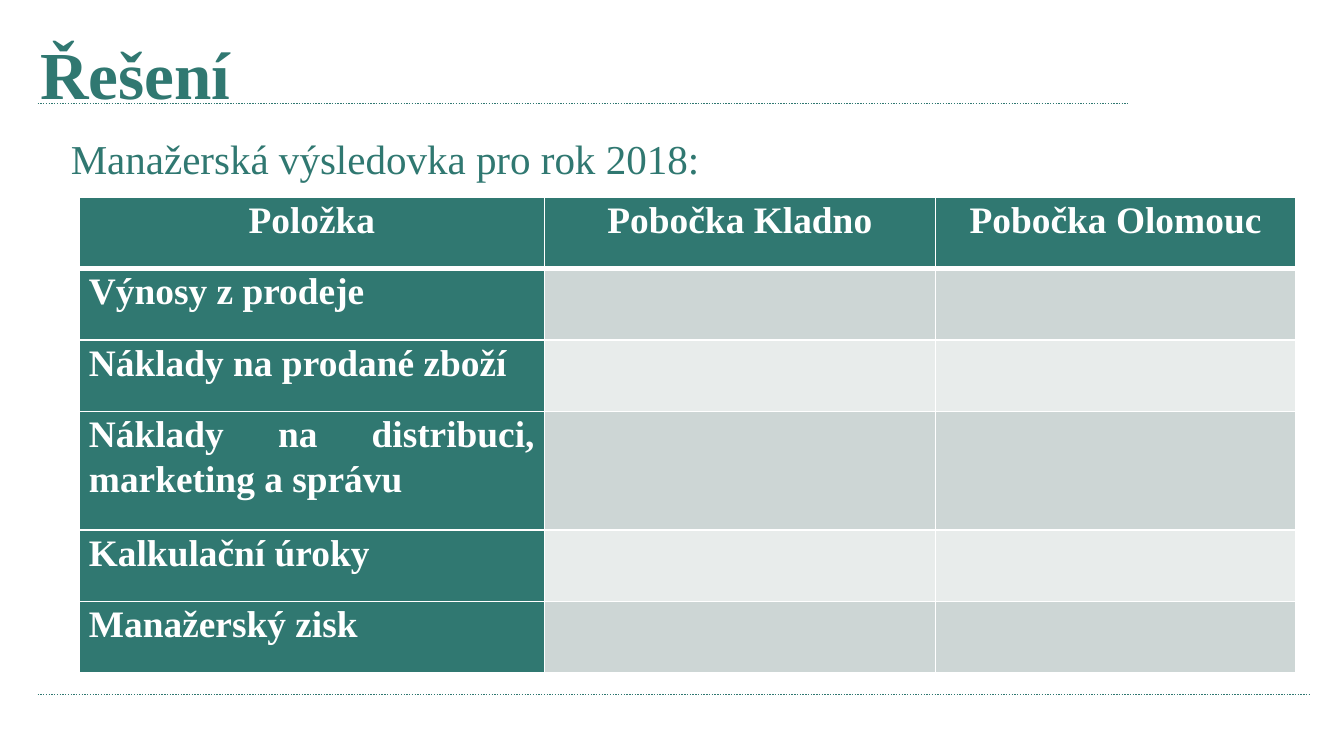
"""Build the slide with the managerial income statement table."""
from lxml.etree import SubElement
from pptx import Presentation
from pptx.dml.color import RGBColor
from pptx.enum.dml import MSO_LINE_DASH_STYLE as Dash
from pptx.enum.shapes import MSO_CONNECTOR as Connector
from pptx.enum.text import MSO_ANCHOR as Anchor, PP_ALIGN as Align
from pptx.oxml import parse_xml
from pptx.oxml.ns import nsdecls, qn
from pptx.util import Cm, Pt

COLORS = {"teal": "307871", "white": "FFFFFF", "dark_band": "CDD6D5", "light_band": "E8ECEB"}
FONT = "Times New Roman"
HEADERS = ["Položka", "Pobočka Kladno", "Pobočka Olomouc"]
ITEMS = [
    "Výnosy z\u00a0prodeje",
    "Náklady na prodané zboží",
    "Náklady na distribuci, marketing a správu",
    "Kalkulační úroky",
    "Manažerský zisk",
]
COLUMN_WIDTHS = [8.79, 7.39, 6.81]
ROW_HEIGHTS = [1.35, 1.35, 1.35, 2.24, 1.35, 1.35]


def color(name):
    return RGBColor.from_string(COLORS[name])


def write(paragraph, text, size, color_name, align, bold=False):
    paragraph.text = text
    paragraph.alignment = align
    font = paragraph.font
    font.name, font.size, font.bold = FONT, Pt(size), bold
    font.color.rgb = color(color_name)


def add_text(slide, box, text, size, align, anchor, bold=False):
    frame = slide.shapes.add_textbox(*map(Cm, box)).text_frame
    frame.word_wrap = True
    frame.vertical_anchor = anchor
    write(frame.paragraphs[0], text, size, "teal", align, bold)


def add_rule(slide, y, right):
    rule = slide.shapes.add_connector(Connector.STRAIGHT, Cm(0.71), Cm(y), Cm(right), Cm(y))
    rule.line.color.rgb = color("teal")
    rule.line.width = Pt(0.75)
    rule.line.dash_style = Dash.ROUND_DOT
    SubElement(rule._element.spPr, qn("a:effectLst"))


def set_borders(cell, top, bottom):
    widths = {"lnL": 1, "lnR": 1, "lnT": top, "lnB": bottom}
    properties = cell._tc.get_or_add_tcPr()
    for index, (side, width) in enumerate(widths.items()):
        properties.insert(index, parse_xml(
            f'<a:{side} {nsdecls("a")} w="{Pt(width)}"><a:solidFill>'
            f'<a:srgbClr val="{COLORS["white"]}"/></a:solidFill></a:{side}>'))


def format_cell(cell, text, row, column):
    if row == 0 or column == 0:
        fill = "teal"
    else:
        fill = "dark_band" if row % 2 else "light_band"
    cell.fill.solid()
    cell.fill.fore_color.rgb = color(fill)
    set_borders(cell, top=3 if row == 1 else 1, bottom=3 if row == 0 else 1)
    if text:
        cell.margin_left = cell.margin_right = Cm(0.18)
        cell.margin_top = cell.margin_bottom = 0
        paragraph = cell.text_frame.paragraphs[0]
        write(paragraph, text, 20, "white", Align.JUSTIFY if row else Align.CENTER, True)
        paragraph.line_spacing = 1.07


def add_statement_table(slide):
    rows = [HEADERS] + [[item, "", ""] for item in ITEMS]
    table = slide.shapes.add_table(
        len(rows), len(HEADERS), Cm(1.5), Cm(3.73),
        Cm(sum(COLUMN_WIDTHS)), Cm(sum(ROW_HEIGHTS))).table
    for column, width in zip(table.columns, COLUMN_WIDTHS):
        column.width = Cm(width)
    for row, height in zip(table.rows, ROW_HEIGHTS):
        row.height = Cm(height)
    for row, texts in enumerate(rows):
        for column, text in enumerate(texts):
            format_cell(table.cell(row, column), text, row, column)


def main():
    presentation = Presentation()
    presentation.slide_width, presentation.slide_height = Cm(25.4), Cm(14.29)
    slide = presentation.slides.add_slide(presentation.slide_layouts[6])
    add_rule(slide, 1.96, 21.31)
    add_rule(slide, 13.13, 24.77)
    add_text(slide, (0.51, 0.36, 22.4, 2.01), "Řešení", 36, Align.LEFT, Anchor.MIDDLE, True)
    add_text(slide, (1.09, 2.4, 23.19, 3.07), "Manažerská výsledovka pro rok 2018:",
             22, Align.JUSTIFY, Anchor.TOP)
    add_statement_table(slide)
    presentation.save("out.pptx")


if __name__ == "__main__":
    main()
